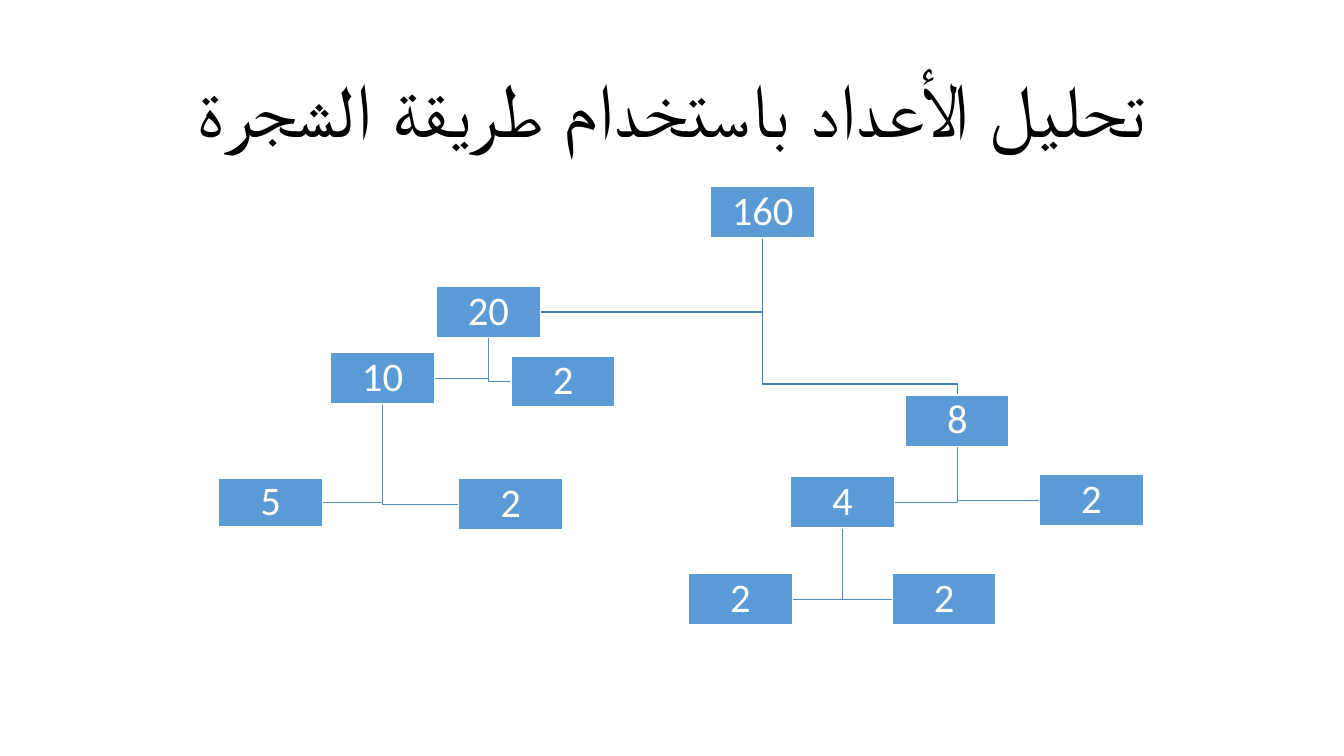
from lxml import etree
from pptx import Presentation
from pptx.dml.color import RGBColor
from pptx.enum.shapes import MSO_SHAPE
from pptx.enum.text import MSO_ANCHOR, PP_ALIGN
from pptx.oxml.ns import qn
from pptx.util import Inches, Pt

RECTANGLE = MSO_SHAPE.RECTANGLE
MIDDLE = MSO_ANCHOR.MIDDLE
CENTER = PP_ALIGN.CENTER

COLORS = {"title": "000000", "box": "5B9BD5", "box_text": "FFFFFF",
          "root_branch": "497CAB", "branch": "538DC1"}
TITLE_FONT = {"name": "Arial", "size": Pt(54)}
NUMBER_FONT = {"name": "Calibri", "size": Pt(29)}
NUMBER_FRAME = {"vertical_anchor": MIDDLE, "word_wrap": True,
                "margin_left": Inches(0.02), "margin_right": Inches(0.02),
                "margin_top": Inches(0.02), "margin_bottom": Inches(0.02)}

BOX_WIDTH, BOX_HEIGHT = 1.03, 0.51
# name: (number, left, top, height)
NODES = {
    "root": ("160", 7.05, 1.85, BOX_HEIGHT),
    "eight": ("8", 8.98, 3.92, BOX_HEIGHT),
    "eight_two": ("2", 10.31, 4.71, BOX_HEIGHT),
    "four": ("4", 7.84, 4.73, BOX_HEIGHT),
    "four_left": ("2", 6.83, 5.69, BOX_HEIGHT),
    "four_right": ("2", 8.85, 5.69, BOX_HEIGHT),
    "twenty": ("20", 4.33, 2.84, BOX_HEIGHT),
    "twenty_two": ("2", 5.07, 3.53, BOX_HEIGHT),
    "ten": ("10", 3.28, 3.5, BOX_HEIGHT),
    "ten_two": ("2", 4.55, 4.75, BOX_HEIGHT),
    "five": ("5", 2.17, 4.74, 0.49),
}
CHILDREN = {
    "ten": ("five", "ten_two"),
    "twenty": ("ten", "twenty_two"),
    "root": ("twenty", "eight"),
    "four": ("four_right", "four_left"),
    "eight": ("four", "eight_two"),
}
TOP_ENTRY = {"eight"}
TOP_ENTRY_GAP = 0.11


def set_attributes(target, values):
    for name, value in values.items():
        setattr(target, name, value)


def color(name):
    return RGBColor.from_string(COLORS[name])


def format_paragraph(paragraph, font_values, color_name):
    set_attributes(paragraph, {"alignment": CENTER, "line_spacing": 0.9})
    font = paragraph.runs[0].font
    set_attributes(font, font_values)
    font.color.rgb = color(color_name)


def add_title(slide, text):
    title = slide.shapes.title
    set_attributes(title, {"left": Inches(0.92), "top": Inches(0.4),
                           "width": Inches(11.5), "height": Inches(1.45)})
    frame = title.text_frame
    frame.text = text
    set_attributes(frame, {"vertical_anchor": MIDDLE, "word_wrap": True})
    paragraph = frame.paragraphs[0]
    format_paragraph(paragraph, TITLE_FONT, "title")
    paragraph._p.get_or_add_pPr().set("rtl", "1")
    run_properties = paragraph.runs[0]._r.get_or_add_rPr()
    etree.SubElement(run_properties, qn("a:cs"), typeface=TITLE_FONT["name"])


def branch_points(parent, child):
    """Corners from the parent's bottom centre to the child's side or top."""
    _, parent_left, parent_top, parent_height = NODES[parent]
    _, left, top, height = NODES[child]
    trunk = parent_left + BOX_WIDTH / 2
    start = (trunk, parent_top + parent_height)
    if child in TOP_ENTRY:
        center, turn = left + BOX_WIDTH / 2, top - TOP_ENTRY_GAP
        return [start, (trunk, turn), (center, turn), (center, top)]
    middle = top + height / 2
    side = left if left > parent_left else left + BOX_WIDTH
    return [start, (trunk, middle), (side, middle)]


def add_branch(slide, parent, child):
    start, *corners = [(Inches(x), Inches(y))
                       for x, y in branch_points(parent, child)]
    builder = slide.shapes.build_freeform(*start)
    builder.add_line_segments(corners, close=False)
    shape = builder.convert_to_shape()
    shape.shadow.inherit = False
    shape.fill.background()
    shape.line.color.rgb = color("root_branch" if parent == "root" else "branch")
    shape.line.width = Pt(1)


def add_number_box(slide, number, left, top, height):
    shape = slide.shapes.add_shape(RECTANGLE, Inches(left), Inches(top),
                                   Inches(BOX_WIDTH), Inches(height))
    shape.shadow.inherit = False
    shape.fill.solid()
    shape.fill.fore_color.rgb = color("box")
    shape.line.color.rgb = color("box_text")
    shape.line.width = Pt(1)
    frame = shape.text_frame
    set_attributes(frame, NUMBER_FRAME)
    frame.text = number
    format_paragraph(frame.paragraphs[0], NUMBER_FONT, "box_text")


def main():
    presentation = Presentation()
    presentation.slide_width = Inches(13.33)
    presentation.slide_height = Inches(7.5)
    slide = presentation.slides.add_slide(presentation.slide_layouts[5])
    add_title(slide, "تحليل الأعداد باستخدام طريقة الشجرة")
    for parent, children in CHILDREN.items():
        for child in children:
            add_branch(slide, parent, child)
    for node in NODES.values():
        add_number_box(slide, *node)
    presentation.save("out.pptx")


if __name__ == "__main__":
    main()
